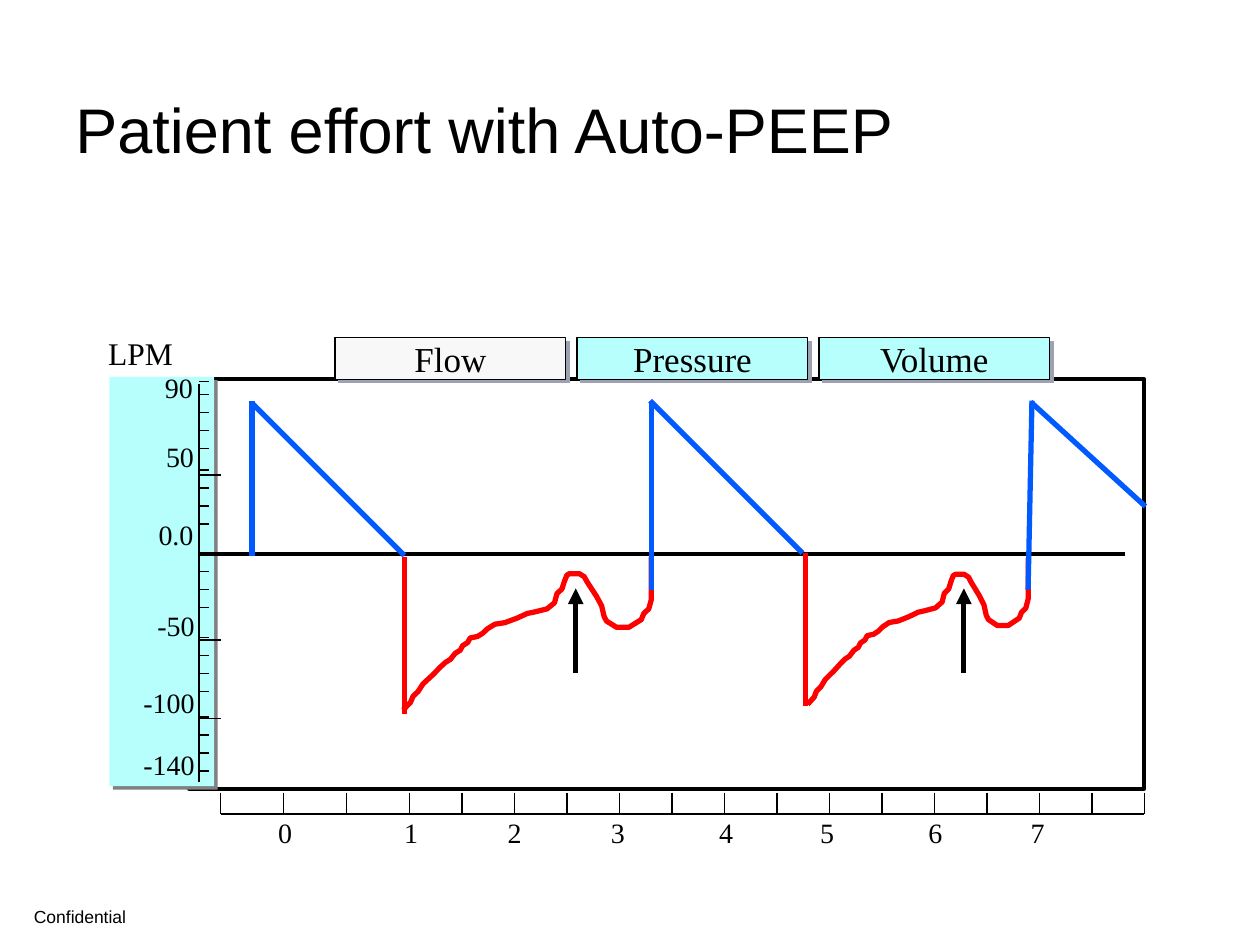
"""Build the slide on patient effort with Auto-PEEP as a flow-time tracing."""
from typing import NamedTuple

from lxml.etree import SubElement
from pptx import Presentation
from pptx.dml.color import RGBColor
from pptx.enum.shapes import MSO_CONNECTOR as Connector, MSO_SHAPE as Preset
from pptx.enum.text import MSO_ANCHOR as Anchor, MSO_AUTO_SIZE as AutoSize, PP_ALIGN as Align
from pptx.oxml.ns import qn
from pptx.util import Pt

BLACK, WHITE, BLUE, RED = "000000", "FFFFFF", "005AFF", "FF0000"
CYAN, PALE, GREY, LILAC = "B7FFFC", "F8F8F8", "808080", "9EA1B2"
SERIF, SANS = "Times New Roman", "Arial"


class Box(NamedTuple):
    left: float
    top: float
    width: float
    height: float


class Stroke(NamedTuple):
    start: tuple[float, float]
    end: tuple[float, float]
    color: str = BLACK
    weight: float = 0.75
    arrow: bool = False


class Label(NamedTuple):
    text: str
    left: float
    top: float
    width: float


class Tab(NamedTuple):
    text: str
    left: float
    fill: str


TABS = [Tab("Volume", 468, CYAN), Tab("Pressure", 329.8, CYAN), Tab("Flow", 191.5, PALE)]
FLOW_LABELS = [
    Label("90", 87.1, 208.1, 30.2), Label("50", 87.8, 247.7, 30.2),
    Label("0.0", 83.5, 292.3, 34.6), Label("-50", 82.8, 344.2, 36),
    Label("-100", 74.9, 388.1, 43.9), Label("-140", 74.9, 423.4, 43.9),
]
SECOND_LEFTS = [151.9, 223.9, 283, 342, 403.9, 461.5, 523.4, 581.8]

AXIS_X, SCALE_TOP, SCALE_BOTTOM = 113.8, 452.9, 465.1
MAJOR_TICKS = [271.4, 317.5, 365.8, 410.4]
MINOR_GROUPS = [225.4, 268.6, 316.1, 364.3, 409.7]
MINOR_TICKS = [218.2] + [top + 10.3 * i for top in MINOR_GROUPS for i in range(4)]
SECOND_TICKS = [126 + 36 * i for i in range(3)] + [234 + 30 * i for i in range(15)]

EXHALE_BOXES = [Box(461.5, 319, 126, 83.5), Box(230.4, 318.2, 141.8, 87.5)]
EXHALE_PERCENT = [
    (0, 100), (3, 95), (4, 91), (6, 88), (8, 83), (10, 80), (12, 77), (15, 72),
    (17, 69), (19, 67), (21, 63), (23, 61), (24, 58), (26, 56), (27, 53), (30, 52),
    (32, 50), (34, 47), (37, 44), (41, 43), (46, 40), (50, 37), (53, 36), (58, 34),
    (61, 30), (62, 24), (64, 21), (65, 16), (66, 12), (67, 11), (71, 11), (73, 13),
    (74, 16), (76, 21), (78, 26), (80, 32), (81, 39), (82, 42), (86, 46), (91, 46),
    (93, 44), (96, 41), (97, 37), (99, 34), (100, 28), (100, 0),
]
BREATHS = [
    Stroke((144, 230.4), (231.1, 317.5), BLUE, 3),
    Stroke((371.5, 229), (458.6, 316.1), BLUE, 3),
    Stroke((587.5, 337), (589.7, 229), BLUE, 3),
    Stroke((589, 229.7), (654.5, 289.4), BLUE, 3),
    Stroke((372.2, 337), (372.2, 229), BLUE, 3),
    Stroke((460.1, 316.1), (460.1, 403.2), RED, 3),
    Stroke((231.1, 318.2), (231.1, 408.2), RED, 3),
]
EFFORT_ARROWS = [Stroke((x, 384.5), (x, 336.2), weight=3, arrow=True) for x in (329, 550.8)]


def rgb(code: str) -> RGBColor:
    """Turn a hex string into a colour."""
    return RGBColor.from_string(code)


def points(box: Box) -> list[Pt]:
    """Turn a box into four lengths."""
    return [Pt(side) for side in box]


def write(frame, text: str, *, size: float, font: str = SERIF, align=Align.LEFT,
          anchor=Anchor.TOP, wrap: bool = False, grow: bool = False, inset: bool = True) -> None:
    """Put one formatted paragraph into a text frame."""
    frame.word_wrap = wrap
    frame.auto_size = AutoSize.SHAPE_TO_FIT_TEXT if grow else AutoSize.NONE
    frame.vertical_anchor = anchor
    if not inset:
        frame.margin_left = frame.margin_right = frame.margin_top = frame.margin_bottom = 0
    paragraph = frame.paragraphs[0]
    paragraph.alignment = align
    run = paragraph.add_run()
    run.text = text
    run.font.size, run.font.name = Pt(size), font
    run.font.color.rgb = rgb(BLACK)


def draw_text(shapes, text: str, box: Box, **style) -> None:
    """Add a text box."""
    write(shapes.add_textbox(*points(box)).text_frame, text, **style)


def draw_panel(shapes, box: Box, fill: str, *, weight: float = 0, shadow: str = ""):
    """Add a rectangle with an optional outline and hard shadow."""
    panel = shapes.add_shape(Preset.RECTANGLE, *points(box))
    panel.fill.solid()
    panel.fill.fore_color.rgb = rgb(fill)
    if weight:
        panel.line.color.rgb = rgb(BLACK)
        panel.line.width = Pt(weight)
    else:
        panel.line.fill.background()
    panel.shadow.inherit = False
    if shadow:
        effects = panel._element.spPr.find(qn("a:effectLst"))
        cast = SubElement(effects, qn("a:outerShdw"), blurRad="0", dist=str(Pt(2.8)),
                          dir="2700000", algn="ctr", rotWithShape="0")
        SubElement(cast, qn("a:srgbClr"), val=shadow)
    return panel


def draw_stroke(shapes, stroke: Stroke) -> None:
    """Add a straight line, with an arrowhead at its end if asked."""
    ends = [Pt(value) for value in (*stroke.start, *stroke.end)]
    connector = shapes.add_connector(Connector.STRAIGHT, *ends)
    connector.line.color.rgb = rgb(stroke.color)
    connector.line.width = Pt(stroke.weight)
    if stroke.arrow:
        SubElement(connector.line._get_or_add_ln(), qn("a:tailEnd"), type="triangle")
    SubElement(connector._element.spPr, qn("a:effectLst"))


def draw_exhale(shapes, box: Box) -> None:
    """Add the expiratory curve scaled into a box."""
    trace = [(Pt(box.left + box.width * x / 100), Pt(box.top + box.height * y / 100))
             for x, y in EXHALE_PERCENT]
    builder = shapes.build_freeform(*trace[0])
    builder.add_line_segments(trace[1:], close=False)
    curve = builder.convert_to_shape()
    curve.fill.solid()
    curve.fill.fore_color.rgb = rgb(WHITE)
    curve.line.color.rgb = rgb(RED)
    curve.line.width = Pt(3)
    curve.shadow.inherit = False


def draw_axes(shapes) -> None:
    """Add both scales with their ticks and labels."""
    strokes = [Stroke((AXIS_X, 219.6), (AXIS_X, 447.1))]
    strokes += [Stroke((AXIS_X, y), (126, y)) for y in MAJOR_TICKS]
    strokes += [Stroke((AXIS_X, y), (119.5, y)) for y in MINOR_TICKS]
    strokes += [Stroke((x, SCALE_TOP), (x, SCALE_BOTTOM)) for x in SECOND_TICKS]
    strokes.append(Stroke((126, SCALE_BOTTOM), (654, SCALE_BOTTOM)))
    for stroke in strokes:
        draw_stroke(shapes, stroke)
    seconds = [Label(str(i), left, 462.4, 22.3) for i, left in enumerate(SECOND_LEFTS)]
    for label in FLOW_LABELS + seconds:
        draw_text(shapes, label.text, Box(label.left, label.top, label.width, 26.6),
                  size=16, grow=True)


def main() -> None:
    """Build and save the slide."""
    deck = Presentation()
    deck.slide_width, deck.slide_height = Pt(720), Pt(540)
    shapes = deck.slides.add_slide(deck.slide_layouts[6]).shapes

    draw_text(shapes, "Confidential", Box(19.4, 517.7, 144.7, 12.2), size=10, font=SANS,
              anchor=Anchor.BOTTOM, wrap=True, grow=True, inset=False)
    draw_panel(shapes, Box(108, 216.7, 545.8, 234), WHITE, weight=2.25)
    draw_panel(shapes, Box(62.6, 215.3, 59.8, 234), CYAN, shadow=GREY)
    for tab in TABS:
        panel = draw_panel(shapes, Box(tab.left, 193, 131.8, 23.8), tab.fill,
                           weight=0.75, shadow=LILAC)
        write(panel.text_frame, tab.text, size=20, align=Align.CENTER, anchor=Anchor.MIDDLE)
    draw_text(shapes, "LPM", Box(54.7, 187.2, 51.8, 28.8), size=18, grow=True)
    draw_axes(shapes)

    draw_stroke(shapes, Stroke((114.5, 316.8), (643, 316.8), weight=2.25))
    draw_stroke(shapes, Stroke((144, 317.5), (144, 229), BLUE, 3))
    for box in EXHALE_BOXES:
        draw_exhale(shapes, box)
    for stroke in BREATHS + EFFORT_ARROWS:
        draw_stroke(shapes, stroke)
    draw_text(shapes, "Patient effort with Auto-PEEP", Box(36, 48.2, 648, 90),
              size=36, font=SANS, wrap=True)
    deck.save("out.pptx")


if __name__ == "__main__":
    main()
